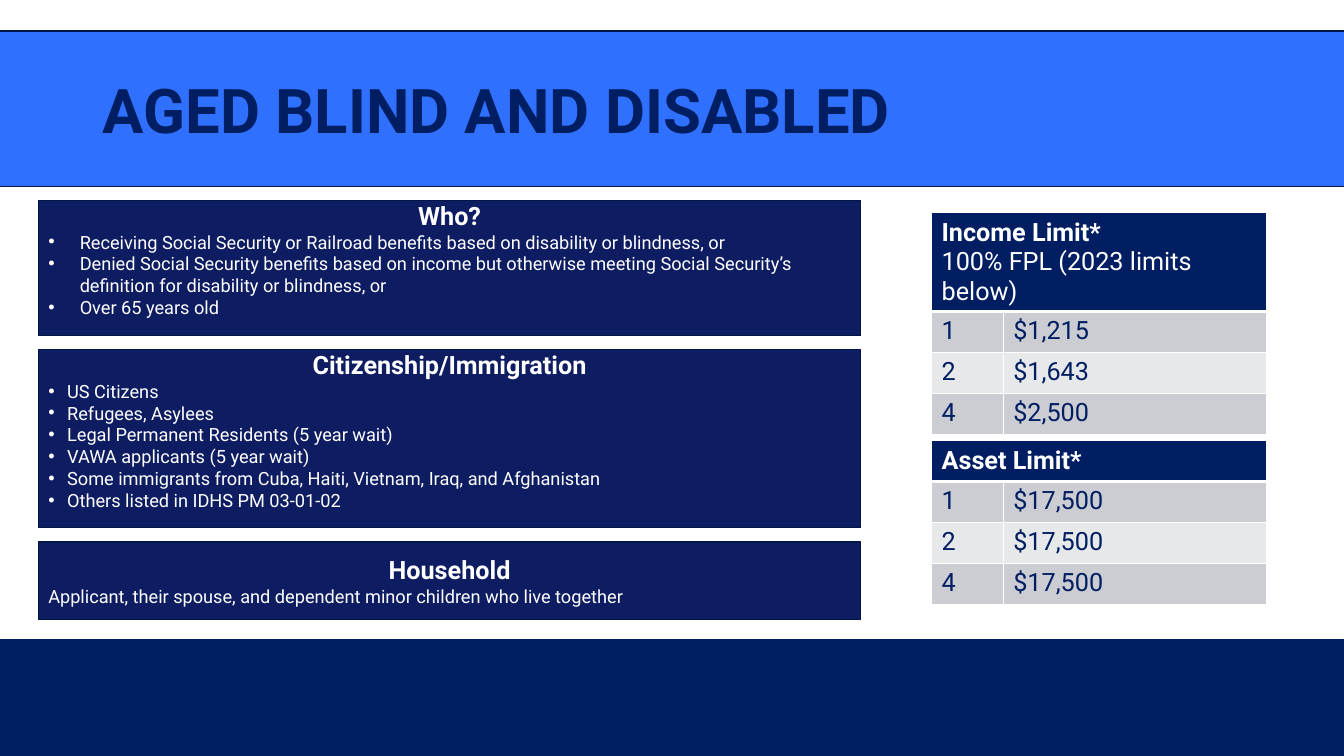
import pptx
import pptx.util
import pptx.dml.color
import pptx.enum.shapes
import pptx.enum.text
import pptx.oxml

Pt = pptx.util.Pt
ALIGN = pptx.enum.text.PP_ALIGN
ANCHOR = pptx.enum.text.MSO_ANCHOR
FONT = "Roboto"
COLORS = {
    "navy": "001E61",
    "panel": "0E1D61",
    "outline": "001648",
    "blue": "3070FF",
    "white": "FFFFFF",
    "band_dark": "CCCDD2",
    "band_light": "E7E8EA",
}
NAMESPACE = 'xmlns:a="http://schemas.openxmlformats.org/drawingml/2006/main"'


def rgb(name):
    return pptx.dml.color.RGBColor.from_string(COLORS[name])


def add_run(paragraph, text, size, color, bold=False):
    run = paragraph.add_run()
    run.text = text
    run.font.name = FONT
    run.font.size = Pt(size)
    run.font.bold = bold
    run.font.color.rgb = rgb(color)


def add_bar(slide, left, top, width, height, fill, outline=None):
    bar = slide.shapes.add_shape(
        pptx.enum.shapes.MSO_SHAPE.RECTANGLE, Pt(left), Pt(top), Pt(width), Pt(height))
    bar.shadow.inherit = False
    bar.fill.solid()
    bar.fill.fore_color.rgb = rgb(fill)
    if outline:
        bar.line.color.rgb = rgb(outline)
        bar.line.width = Pt(1)
    else:
        bar.line.fill.background()
    return bar


def set_bullet(paragraph, indent):
    props = paragraph._p.get_or_add_pPr()
    props.set("marL", str(Pt(indent)))
    props.set("indent", str(-Pt(indent)))
    for tag in ('buFont typeface="Arial"', 'buChar char="•"'):
        name, attribute = tag.split(" ")
        props.append(pptx.oxml.parse_xml(f"<a:{name} {NAMESPACE} {attribute}/>"))


def add_panel(slide, top, height, heading, lines, indent=None):
    """Add a rule panel; an indent makes its lines bulleted and starts them at the top."""
    frame = add_bar(slide, 27.4, top, 587.5, height, "panel", "outline").text_frame
    frame.word_wrap = True
    frame.vertical_anchor = ANCHOR.MIDDLE
    if indent:
        frame.vertical_anchor = ANCHOR.TOP
        frame.margin_top = Pt(0)
    title = frame.paragraphs[0]
    title.alignment = ALIGN.CENTER
    add_run(title, heading, 18, "white", bold=True)
    for line in lines:
        paragraph = frame.add_paragraph()
        paragraph.alignment = ALIGN.LEFT
        if indent:
            set_bullet(paragraph, indent)
        add_run(paragraph, line, 13, "white")


def set_borders(cell, top=1, bottom=1):
    props = cell._tc.get_or_add_tcPr()
    for side, width in (("L", 1), ("R", 1), ("T", top), ("B", bottom)):
        props.append(pptx.oxml.parse_xml(
            f'<a:ln{side} {NAMESPACE} w="{Pt(width)}"><a:solidFill>'
            f'<a:srgbClr val="{COLORS["white"]}"/></a:solidFill></a:ln{side}>'))


def fill_cell(cell, fill):
    cell.fill.solid()
    cell.fill.fore_color.rgb = rgb(fill)


def add_limits(slide, top, header_height, header_lines, limits):
    """Add a table of limits by household size under a merged header."""
    row_height = 29.2
    table = slide.shapes.add_table(
        len(limits) + 1, 2, Pt(665.4), Pt(top), Pt(239),
        Pt(header_height + row_height * len(limits))).table
    table.first_row = table.horz_banding = False
    table.columns[0].width, table.columns[1].width = Pt(51.2), Pt(187.8)
    table.rows[0].height = Pt(header_height)

    header = table.cell(0, 0)
    header.merge(table.cell(0, 1))
    for column in range(2):
        set_borders(table.cell(0, column), bottom=3)
    fill_cell(header, "navy")
    for index, line in enumerate(header_lines):
        frame = header.text_frame
        paragraph = frame.add_paragraph() if index else frame.paragraphs[0]
        add_run(paragraph, line, 18, "white", bold=index == 0)

    for row, limit in enumerate(limits, start=1):
        table.rows[row].height = Pt(row_height)
        for column, text in enumerate(limit):
            cell = table.cell(row, column)
            set_borders(cell, top=3 if row == 1 else 1)
            fill_cell(cell, "band_dark" if row % 2 else "band_light")
            add_run(cell.text_frame.paragraphs[0], text, 18, "navy")


def set_title(slide, text):
    title = slide.shapes.title
    title.left, title.top, title.width, title.height = Pt(66.2), Pt(28.8), Pt(828), Pt(104.4)
    frame = title.text_frame
    frame.auto_size = pptx.enum.text.MSO_AUTO_SIZE.NONE
    frame.vertical_anchor = ANCHOR.MIDDLE
    paragraph = frame.paragraphs[0]
    paragraph.alignment = ALIGN.LEFT
    paragraph.line_spacing = 0.9
    add_run(paragraph, text, 44, "navy", bold=True)


def main():
    deck = pptx.Presentation()
    deck.slide_width, deck.slide_height = Pt(960), Pt(540)
    slide = deck.slides.add_slide(deck.slide_layouts[5])

    add_bar(slide, 0, 456.5, 960, 83.5, "navy")
    banner = add_bar(slide, -27.4, 22.3, 995.8, 110.9, "blue", "outline")
    slide.shapes._spTree.insert(2, banner._element)  # behind the title
    set_title(slide, "AGED BLIND AND DISABLED")

    add_panel(slide, 143.3, 96.5, "Who?", [
        "Receiving Social Security or Railroad benefits based on disability or blindness, or",
        "Denied Social Security benefits based on income but otherwise meeting "
        "Social Security’s definition for disability or blindness, or",
        "Over 65 years old",
    ], indent=22.5)
    add_panel(slide, 249.8, 126.9, "Citizenship/Immigration", [
        "US Citizens",
        "Refugees, Asylees",
        "Legal Permanent Residents (5 year wait)",
        "VAWA applicants (5 year wait)",
        "Some immigrants from Cuba, Haiti, Vietnam, Iraq, and Afghanistan",
        "Others listed in IDHS PM 03-01-02",
    ], indent=13.5)
    add_panel(slide, 387.2, 55.2, "Household", [
        "Applicant, their spouse, and dependent minor children who live together",
    ])

    add_limits(slide, 152, 70.6, ["Income Limit*", "100% FPL (2023 limits below)"],
               [("1", "$1,215"), ("2", "$1,643"), ("4", "$2,500")])
    add_limits(slide, 314.8, 29.2, ["Asset Limit*"],
               [(size, "$17,500") for size in ("1", "2", "4")])
    deck.save("out.pptx")


if __name__ == "__main__":
    main()
